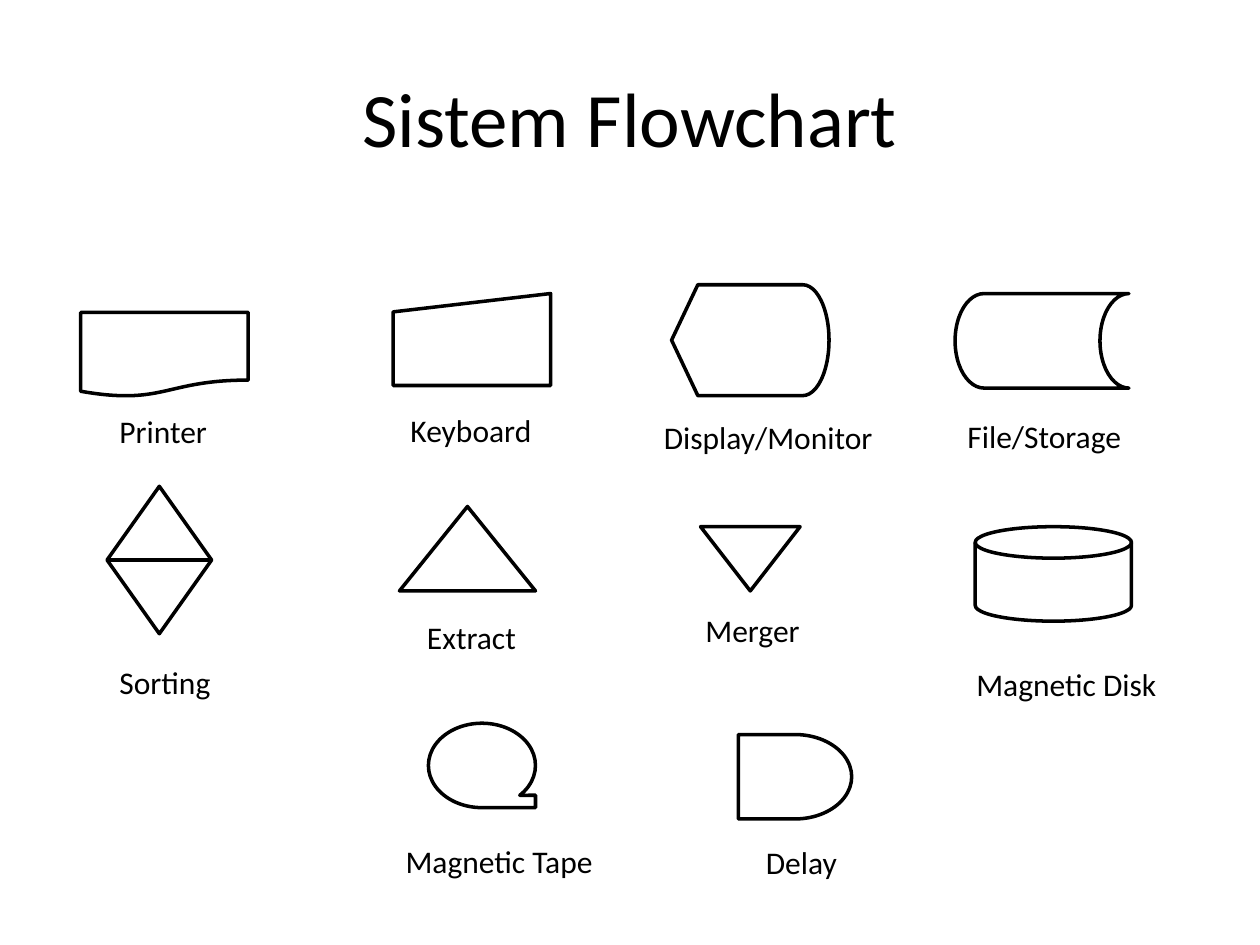
from dataclasses import dataclass

from pptx import Presentation
from pptx import util as u
from pptx.dml.color import RGBColor
from pptx.enum import shapes, text

COLORS = {"ink": "000000", "paper": "FFFFFF"}
FONT = "Calibri"
SLIDE_WIDTH, SLIDE_HEIGHT = 10, 7.5
COLUMN_WIDTH = SLIDE_WIDTH / 4
FIRST_ROW, ROW_HEIGHT = 2.2, 1.65
LABEL_HEIGHT = 0.4
KIND = shapes.MSO_SHAPE


@dataclass(frozen=True)
class Symbol:
    """A flowchart symbol; places are (left, top) inside its grid cell."""
    name: str
    kind: shapes.MSO_SHAPE
    column: int
    row: int
    place: tuple[float, float]
    size: tuple[float, float]
    label_place: tuple[float, float]
    label_width: float


SYMBOLS = [
    Symbol("Printer", KIND.FLOWCHART_DOCUMENT, 0, 0,
           (0.64, 0.28), (1.33, 0.67), (0.85, 1.02), 0.9),
    Symbol("Keyboard", KIND.FLOWCHART_MANUAL_INPUT, 1, 0,
           (0.62, 0.13), (1.25, 0.73), (0.66, 1.01), 1.17),
    Symbol("Display/Monitor", KIND.FLOWCHART_DISPLAY, 2, 0,
           (0.33, 0.06), (1.25, 0.88), (0.17, 1.07), 1.88),
    Symbol("File/Storage", KIND.FLOWCHART_STORED_DATA, 3, 0,
           (0.08, 0.13), (1.38, 0.75), (0.08, 1.06), 1.44),
    Symbol("Sorting", KIND.FLOWCHART_SORT, 0, 1,
           (0.85, 0.01), (0.83, 1.17), (0.85, 1.36), 0.93),
    Symbol("Extract", KIND.FLOWCHART_EXTRACT, 1, 1,
           (0.67, 0.17), (1.08, 0.67), (0.79, 1.01), 0.91),
    Symbol("Merger", KIND.FLOWCHART_MERGE, 2, 1,
           (0.56, 0.33), (0.79, 0.51), (0.5, 0.95), 0.96),
    Symbol("Magnetic Disk", KIND.FLOWCHART_MAGNETIC_DISK, 3, 1,
           (0.24, 0.33), (1.24, 0.75), (0.15, 1.38), 1.65),
    Symbol("Magnetic Tape", KIND.FLOWCHART_SEQUENTIAL_ACCESS_STORAGE, 1, 2,
           (0.9, 0.24), (0.85, 0.67), (0.62, 1.13), 1.71),
    Symbol("Delay", KIND.FLOWCHART_DELAY, 2, 2,
           (0.86, 0.33), (0.9, 0.67), (0.98, 1.14), 0.77),
]


def color(name: str) -> RGBColor:
    return RGBColor.from_string(COLORS[name])


def inches(*lengths: float) -> list[u.Length]:
    return [u.Inches(length) for length in lengths]


def add_text(slide, words: str, left: float, top: float, width: float,
             height: float, *, size: float, wrap: bool = False,
             align=text.PP_ALIGN.LEFT, anchor=text.MSO_ANCHOR.TOP) -> None:
    box = slide.shapes.add_textbox(*inches(left, top, width, height))
    frame = box.text_frame
    frame.word_wrap = wrap
    frame.auto_size = (text.MSO_AUTO_SIZE.NONE if wrap
                       else text.MSO_AUTO_SIZE.SHAPE_TO_FIT_TEXT)
    frame.vertical_anchor = anchor
    para = frame.paragraphs[0]
    para.alignment = align
    span = para.add_run()
    span.text = words
    span.font.name = FONT
    span.font.size = u.Pt(size)
    span.font.color.rgb = color("ink")


def add_symbol(slide, symbol: Symbol) -> None:
    cell_left = symbol.column * COLUMN_WIDTH
    cell_top = FIRST_ROW + symbol.row * ROW_HEIGHT
    left, top = symbol.place
    shape = slide.shapes.add_shape(
        symbol.kind, *inches(cell_left + left, cell_top + top, *symbol.size))
    shape.shadow.inherit = False
    shape.fill.solid()
    shape.fill.fore_color.rgb = color("paper")
    shape.line.color.rgb = color("ink")
    shape.line.width = u.Pt(2)
    left, top = symbol.label_place
    add_text(slide, symbol.name, cell_left + left, cell_top + top,
             symbol.label_width, LABEL_HEIGHT, size=18)


def main() -> None:
    deck = Presentation()
    deck.slide_width, deck.slide_height = inches(SLIDE_WIDTH, SLIDE_HEIGHT)
    page = deck.slides.add_slide(deck.slide_layouts[6])
    page.background.fill.solid()
    page.background.fill.fore_color.rgb = color("paper")
    add_text(page, "Sistem Flowchart", 0.05 * SLIDE_WIDTH, 0.04 * SLIDE_HEIGHT,
             0.9 * SLIDE_WIDTH, 1.25, size=44, wrap=True,
             align=text.PP_ALIGN.CENTER, anchor=text.MSO_ANCHOR.MIDDLE)
    for symbol in SYMBOLS:
        add_symbol(page, symbol)
    deck.save("out.pptx")


if __name__ == "__main__":
    main()
